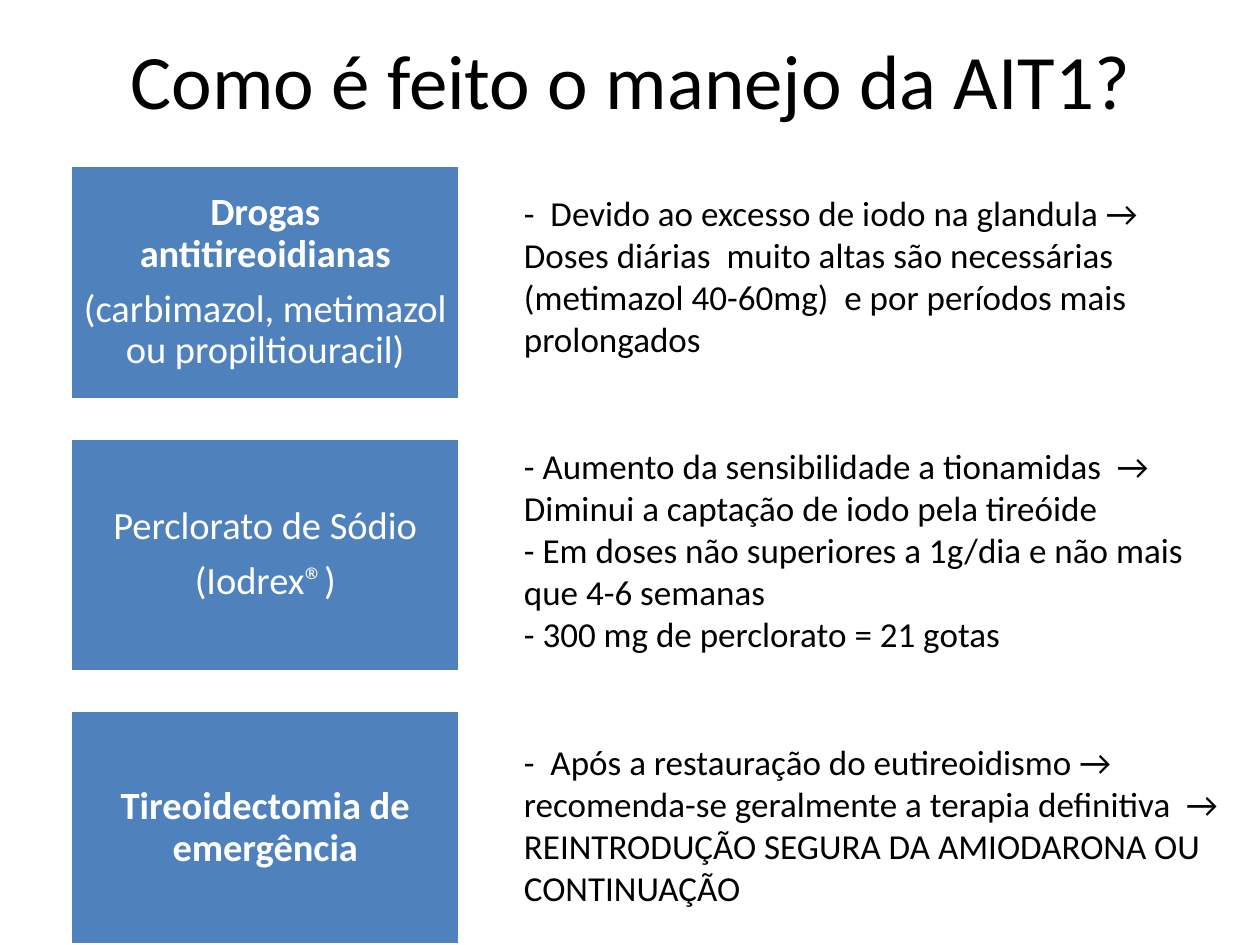
from dataclasses import dataclass

from pptx import Presentation
from pptx.dml.color import RGBColor
from pptx.enum.shapes import MSO_SHAPE as Shape
from pptx.enum.text import MSO_ANCHOR as Anchor, PP_ALIGN as Align
from pptx.util import Inches, Pt


@dataclass(frozen=True)
class Theme:
    font: str = "Calibri"
    text: RGBColor = RGBColor(0x00, 0x00, 0x00)
    box: RGBColor = RGBColor(0x4F, 0x81, 0xBD)
    light: RGBColor = RGBColor(0xFF, 0xFF, 0xFF)
    title_size: float = 44
    box_size: float = 22
    body_size: float = 20
    box_gap: float = 7.7
    group_gap: float = 48.8  # two lines of body text


class SlideBuilder:
    def __init__(self, slide, theme):
        self.slide = slide
        self.theme = theme

    def style(self, paragraph, size, color, align, bold=False):
        paragraph.alignment = align
        for run in paragraph.runs:
            run.font.name = self.theme.font
            run.font.size = Pt(size)
            run.font.color.rgb = color
            run.font.bold = bold

    def text_box(self, left, top, width, height, anchor):
        frame = self.slide.shapes.add_textbox(
            Inches(left), Inches(top), Inches(width), Inches(height)).text_frame
        frame.word_wrap = True
        frame.vertical_anchor = anchor
        return frame

    def title(self, text, left, top, width, height):
        frame = self.text_box(left, top, width, height, Anchor.MIDDLE)
        frame.text = text
        self.style(frame.paragraphs[0], self.theme.title_size, self.theme.text, Align.CENTER)

    def treatment(self, lines, left, top, width, height):
        """Filled box; lines are (text, bold) pairs."""
        box = self.slide.shapes.add_shape(
            Shape.RECTANGLE, Inches(left), Inches(top), Inches(width), Inches(height))
        box.shadow.inherit = False
        box.fill.solid()
        box.fill.fore_color.rgb = self.theme.box
        box.line.color.rgb = self.theme.light
        box.line.width = Pt(2)
        frame = box.text_frame
        frame.word_wrap = True
        frame.vertical_anchor = Anchor.MIDDLE
        frame.margin_left = frame.margin_right = Inches(0.09)
        frame.margin_top = frame.margin_bottom = Inches(0.09)
        frame.text = "\n".join(text for text, _ in lines)
        for index, (paragraph, (_, bold)) in enumerate(zip(frame.paragraphs, lines)):
            self.style(paragraph, self.theme.box_size, self.theme.light, Align.CENTER, bold)
            paragraph.line_spacing = 0.9
            paragraph.space_before = Pt(self.theme.box_gap if index else 0)

    def details(self, groups, left, top, width, height):
        """One text column, with a gap before each group after the first."""
        frame = self.text_box(left, top, width, height, Anchor.TOP)
        frame.text = "\n".join(line for group in groups for line in group)
        paragraphs = iter(frame.paragraphs)
        for group_index, group in enumerate(groups):
            for line_index in range(len(group)):
                paragraph = next(paragraphs)
                self.style(paragraph, self.theme.body_size, self.theme.text, Align.LEFT)
                if group_index and line_index == 0:
                    paragraph.space_before = Pt(self.theme.group_gap)


TREATMENTS = [
    [("Drogas antitireoidianas", True),
     ("(carbimazol, metimazol ou propiltiouracil)", False)],
    [("Perclorato de Sódio", False), ("(Iodrex®)", False)],
    [("Tireoidectomia de emergência", True)],
]

DETAILS = [
    ["-  Devido ao excesso de iodo na glandula →",
     "Doses diárias  muito altas são necessárias",
     "(metimazol 40-60mg)  e por períodos mais",
     "prolongados"],
    ["- Aumento da sensibilidade a tionamidas  → Diminui a captação de iodo pela tireóide",
     "- Em doses não superiores a 1g/dia e não mais que 4-6 semanas",
     "- 300 mg de perclorato = 21 gotas"],
    ["-  Após a restauração do eutireoidismo → recomenda-se geralmente a terapia "
     "definitiva  → REINTRODUÇÃO SEGURA DA AMIODARONA OU CONTINUAÇÃO"],
]


def main():
    deck = Presentation()
    deck.slide_width, deck.slide_height = Inches(10), Inches(7.5)
    builder = SlideBuilder(deck.slides.add_slide(deck.slide_layouts[6]), Theme())

    # Title
    builder.title("Como é feito o manejo da AIT1?", 0.51, 0, 9, 1.25)

    # Treatments, evenly spaced down the left side
    first_top, last_top = 1.31, 5.64
    pitch = (last_top - first_top) / (len(TREATMENTS) - 1)
    for row, lines in enumerate(TREATMENTS):
        builder.treatment(lines, 0.56, first_top + row * pitch, 3.09, 1.86)

    # Details of each treatment
    builder.details(DETAILS, 4.06, 1.47, 5.75, 6.03)

    deck.save("out.pptx")


if __name__ == "__main__":
    main()
